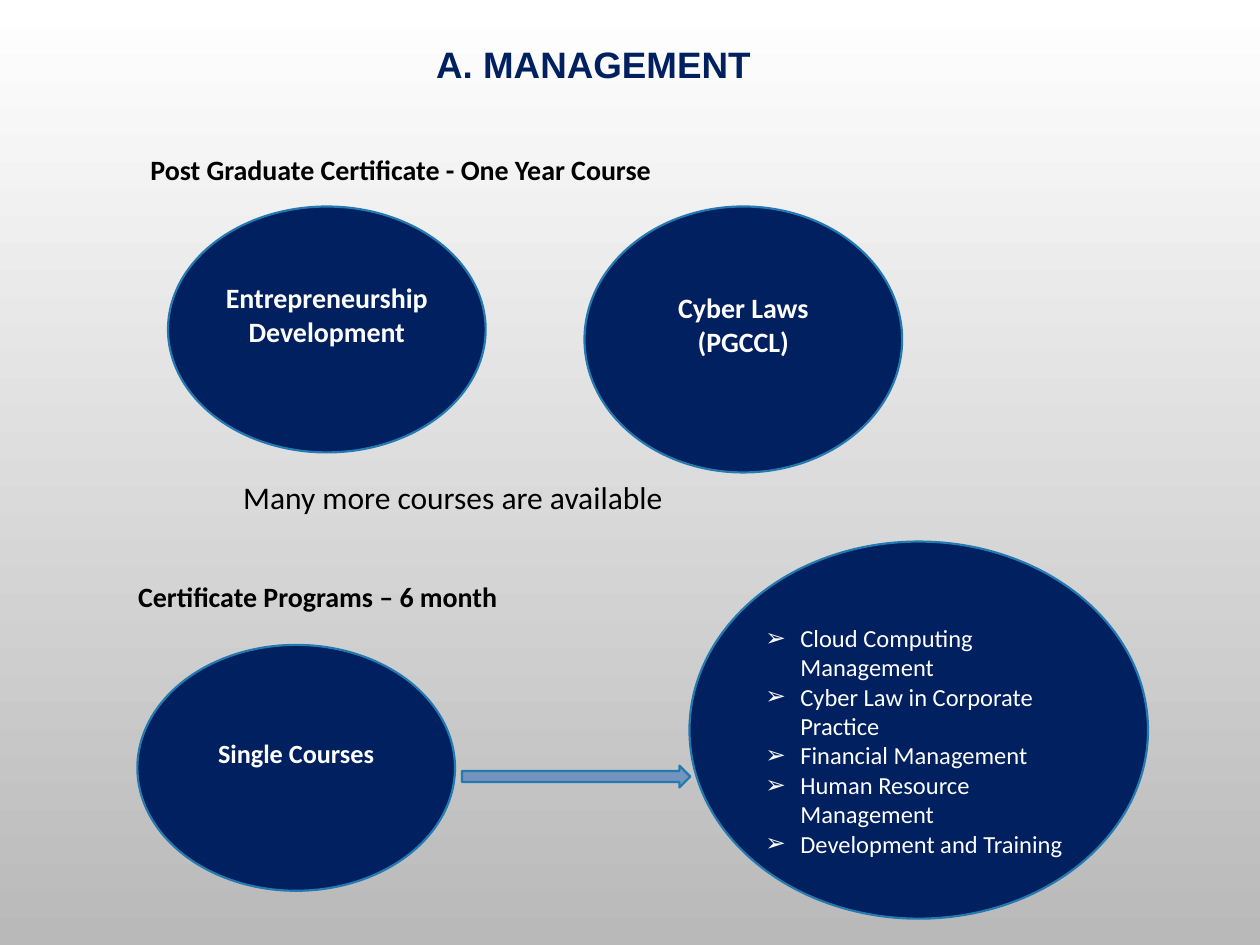
from lxml import etree
from pptx import Presentation
from pptx.dml.color import RGBColor
from pptx.enum import shapes, text
from pptx.oxml import ns
from pptx.util import Pt

COLORS = {
    "navy": "002060",
    "outline": "2379B0",
    "arrow": "7294BD",
    "white": "FFFFFF",
    "gray": "B9B9B9",
    "black": "000000",
}


def add_text(frame, lines, size, color, bold=False, font="Calibri",
             align=text.PP_ALIGN.LEFT, anchor=text.MSO_ANCHOR.TOP,
             left=5, bottom=3, bullet=None):
    """Fill a text frame with one paragraph per line."""
    frame.word_wrap = True
    frame.auto_size = text.MSO_AUTO_SIZE.NONE
    frame.vertical_anchor = anchor
    frame.margin_left, frame.margin_right = Pt(left), Pt(5)
    frame.margin_top, frame.margin_bottom = Pt(3), Pt(bottom)
    for index, line in enumerate(lines):
        paragraph = frame.add_paragraph() if index else frame.paragraphs[0]
        paragraph.alignment = align
        if bullet:
            properties = paragraph._p.get_or_add_pPr()
            properties.set("marL", str(Pt(20)))
            properties.set("indent", str(Pt(-20)))
            etree.SubElement(properties, ns.qn("a:buFont"), typeface="Arial")
            etree.SubElement(properties, ns.qn("a:buChar"), char=bullet)
        run = paragraph.add_run()
        run.text = line
        run.font.name = font
        run.font.size = Pt(size)
        run.font.bold = bold
        run.font.color.rgb = RGBColor.from_string(COLORS[color])


def add_filled(kind, box, fill):
    """Add an outlined preset shape without shadow."""
    shape = slide.shapes.add_shape(kind, *map(Pt, box))
    shape.shadow.inherit = False
    shape.fill.solid()
    shape.fill.fore_color.rgb = RGBColor.from_string(COLORS[fill])
    shape.line.color.rgb = RGBColor.from_string(COLORS["outline"])
    shape.line.width = Pt(1.25)
    return shape


presentation = Presentation()
presentation.slide_width, presentation.slide_height = Pt(720), Pt(540)
slide = presentation.slides.add_slide(presentation.slide_layouts[5])

background = slide.background.fill
background.gradient()
background.gradient_angle = 270
for stop, name in zip(background.gradient_stops, ("white", "gray")):
    stop.color.rgb = RGBColor.from_string(COLORS[name])
    stop.position = 0 if name == "white" else 1

title = slide.shapes.title
title.left, title.top, title.width, title.height = map(Pt, (169, 21, 346, 31))
add_text(title.text_frame, ["A. MANAGEMENT "], 21, "navy", True, "Arial",
         text.PP_ALIGN.CENTER)

# box, wording, size, bold, left inset
labels = [
    ((0, 84, 510, 47), "Post Graduate Certificate - One Year Course", 16, True, 86),
    ((134, 270, 258, 27), "Many more courses are available", 18, False, 5),
    ((38, 328, 305, 25), "Certificate Programs – 6 month", 16, True, 41),
]
for box, wording, size, bold, inset in labels:
    label = slide.shapes.add_textbox(*map(Pt, box))
    add_text(label.text_frame, [wording], size, "black", bold, left=inset)

courses = [
    ((96, 118, 181.5, 140.5), "Entrepreneurship Development", 16),
    ((334, 118, 181.5, 152), "Cyber Laws (PGCCL)", 16),
    ((78.5, 368.5, 181.5, 140.5), "Single Courses", 15),
]
for box, wording, size in courses:
    course = add_filled(shapes.MSO_SHAPE.OVAL, box, "navy")
    add_text(course.text_frame, [wording], size, "white", True,
             align=text.PP_ALIGN.CENTER, anchor=text.MSO_ANCHOR.MIDDLE, bottom=20)

programs = add_filled(shapes.MSO_SHAPE.OVAL, (394, 309.5, 262, 215.5), "navy")
add_text(programs.text_frame,
         ["Cloud Computing Management", "Cyber Law in Corporate Practice",
          "Financial Management", "Human Resource Management",
          "Development and Training"],
         14, "white", anchor=text.MSO_ANCHOR.BOTTOM, bullet="➢")

add_filled(shapes.MSO_SHAPE.RIGHT_ARROW, (264, 437.5, 130.5, 12.5), "arrow")

presentation.save("out.pptx")
